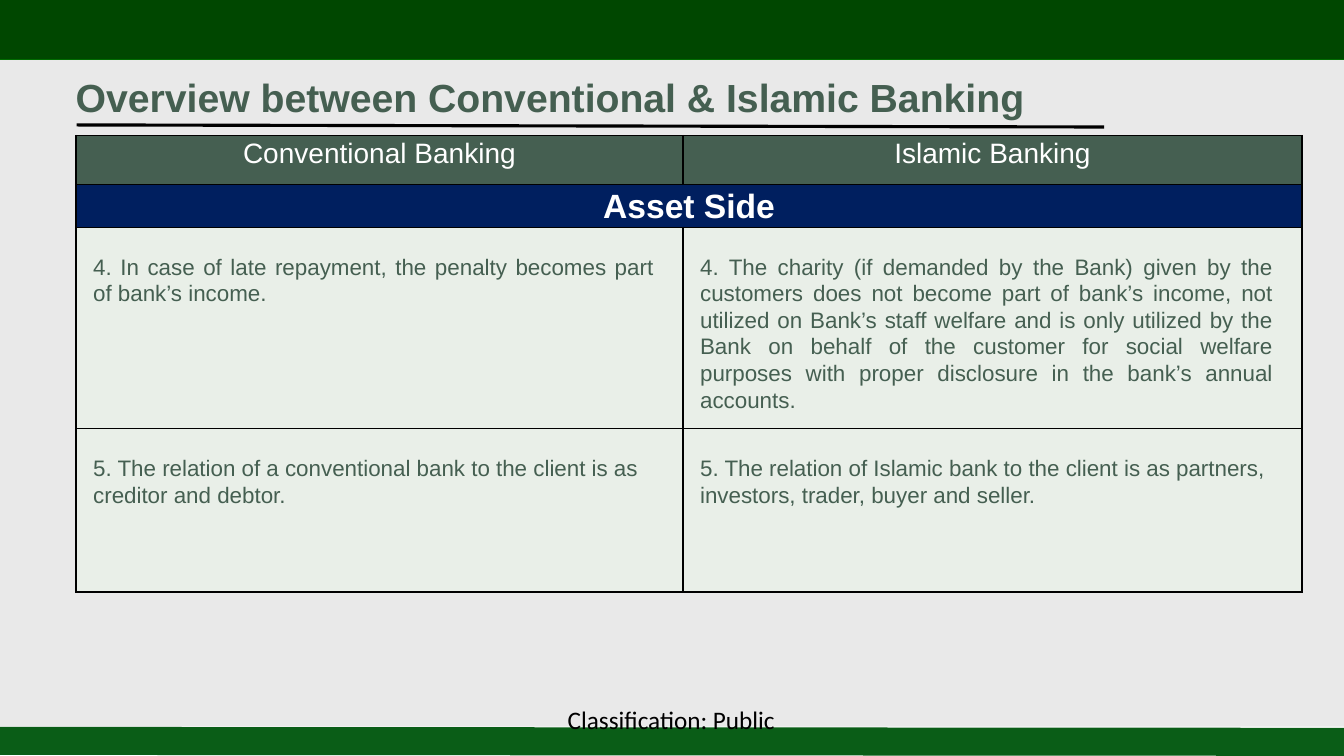
import pptx
import pptx.util
import pptx.dml.color
import pptx.enum.shapes
import pptx.enum.text
from lxml import etree
from pptx.oxml.ns import qn

RGBColor = pptx.dml.color.RGBColor
Pt = pptx.util.Pt
ALIGN = pptx.enum.text.PP_ALIGN

BLACK = RGBColor(0x00, 0x00, 0x00)
WHITE = RGBColor(0xFF, 0xFF, 0xFF)
GREY = RGBColor(0xD9, 0xD9, 0xD9)
BANNER_GREEN = RGBColor(0x00, 0x47, 0x00)
BANNER_EDGE = RGBColor(0x00, 0x6B, 0x00)
FOOTER_GREEN = RGBColor(0x0A, 0x5D, 0x17)
SLATE_GREEN = RGBColor(0x45, 0x5F, 0x51)
NAVY = RGBColor(0x00, 0x1F, 0x5F)
PALE_GREEN = RGBColor(0xE9, 0xEF, 0xE8)

WIDTH = pptx.util.Inches(13.33)
HEIGHT = pptx.util.Inches(7.5)
BANNER_BOTTOM = 7.87
FOOTER_TOP = 96.13
COLUMN_SHARES = (45.16, 46.06)
ROW_SHARES = (6.53, 5.6, 26.67, 21.6)

HEADINGS = ("Conventional Banking", "Islamic Banking")
SECTION = "Asset Side"
COMPARISONS = (
    (("4. In case of late repayment, the penalty becomes part of bank’s income.",),
     ("4. The charity (if demanded by the Bank) given by the customers does not become "
      "part of bank’s income, not utilized on Bank’s staff welfare and is only utilized "
      "by the Bank on behalf of the customer for social welfare purposes with proper "
      "disclosure in the bank’s annual accounts.",)),
    (("5. The relation of a conventional bank to the client is as",
      "creditor and debtor."),
     ("5. The relation of Islamic bank to the client is as partners,",
      "investors, trader, buyer and seller.")),
)


def across(percent):
    return round(WIDTH * percent / 100)


def down(percent):
    return round(HEIGHT * percent / 100)


def add_band(slide, top, bottom, color, opacity=100):
    """Fill the full slide width between two heights."""
    band = slide.shapes.add_shape(pptx.enum.shapes.MSO_SHAPE.RECTANGLE,
                                  0, down(top), WIDTH, down(bottom - top))
    band.shadow.inherit = False
    band.fill.solid()
    band.fill.fore_color.rgb = color
    band.line.fill.background()
    if opacity < 100:
        tint = band.fill._xPr.find(".//" + qn("a:srgbClr"))
        etree.SubElement(tint, qn("a:alpha")).set("val", str(opacity * 1000))


def add_rule(slide, start, end, color, weight):
    (x1, y1), (x2, y2) = start, end
    rule = slide.shapes.add_connector(pptx.enum.shapes.MSO_CONNECTOR.STRAIGHT,
                                      across(x1), down(y1), across(x2), down(y2))
    rule.line.color.rgb = color
    rule.line.width = Pt(weight)
    etree.SubElement(rule._element.spPr, qn("a:effectLst"))


def write(paragraph, text, font, size, color, bold=False):
    run = paragraph.add_run()
    run.text = text
    run.font.name = font
    run.font.size = Pt(size)
    run.font.color.rgb = color
    run.font.bold = bold


def add_label(slide, left, top, width, height, text, *style):
    label = slide.shapes.add_textbox(across(left), down(top), across(width), down(height))
    frame = label.text_frame
    frame.word_wrap = True
    frame.margin_left = frame.margin_right = frame.margin_bottom = 0
    frame.margin_top = Pt(1)
    write(frame.paragraphs[0], text, *style)


def border_cell(cell):
    properties = cell._tc.get_or_add_tcPr()
    for position, side in enumerate(("lnL", "lnR", "lnT", "lnB")):
        edge = etree.Element(qn("a:" + side), w=str(Pt(1)))
        fill = etree.SubElement(edge, qn("a:solidFill"))
        etree.SubElement(fill, qn("a:srgbClr"), val=str(BLACK))
        properties.insert(position, edge)


def fill_cell(cell, lines, fill, size, color, bold=False, body=False):
    """Body cells are inset and justified; the others are centred."""
    cell.fill.solid()
    cell.fill.fore_color.rgb = fill
    cell.margin_left = pptx.util.Inches(0.17 if body else 0)
    cell.margin_right = pptx.util.Inches(0.29 if body else 0)
    cell.margin_top = pptx.util.Inches(0.26 if body else 0.03)
    cell.margin_bottom = 0
    for index, line in enumerate(lines):
        frame = cell.text_frame
        paragraph = frame.add_paragraph() if index else frame.paragraphs[0]
        paragraph.alignment = ALIGN.JUSTIFY if body else ALIGN.CENTER
        if body:
            paragraph.line_spacing = 1.07
        write(paragraph, line, "Arial", size, color, bold)


def add_comparison(slide):
    table = slide.shapes.add_table(
        len(ROW_SHARES), len(COLUMN_SHARES), across(5.66), down(17.92),
        across(sum(COLUMN_SHARES)), down(sum(ROW_SHARES))).table
    for column, share in zip(table.columns, COLUMN_SHARES):
        column.width = across(share)
    for row, share in zip(table.rows, ROW_SHARES):
        row.height = down(share)
    for column, heading in enumerate(HEADINGS):
        fill_cell(table.cell(0, column), [heading], SLATE_GREEN, 20, WHITE)
    section = table.cell(1, 0)
    section.merge(table.cell(1, 1))
    fill_cell(section, [SECTION], NAVY, 24, WHITE, bold=True)
    for row, sides in enumerate(COMPARISONS, start=2):
        for column, lines in enumerate(sides):
            fill_cell(table.cell(row, column), lines, PALE_GREEN, 16, SLATE_GREEN, body=True)
    for cell in table.iter_cells():
        border_cell(cell)


def main():
    deck = pptx.Presentation()
    deck.slide_width, deck.slide_height = WIDTH, HEIGHT
    slide = deck.slides.add_slide(deck.slide_layouts[6])

    add_band(slide, BANNER_BOTTOM, FOOTER_TOP, GREY, opacity=56)
    add_rule(slide, (0, 98), (100, 98.13), FOOTER_GREEN, 20)
    add_comparison(slide)
    add_label(slide, 5.63, 9.47, 73.82, 6.4,
              "Overview between Conventional & Islamic Banking",
              "Arial", 28, SLATE_GREEN, True)
    add_band(slide, 0, BANNER_BOTTOM, BANNER_GREEN)
    add_rule(slide, (0, BANNER_BOTTOM), (100, BANNER_BOTTOM), BANNER_EDGE, 1)
    add_rule(slide, (5.7, 16.53), (82.15, 16.8), BLACK, 2.25)
    add_label(slide, 42.24, 93, 15.8, 3.73, "Classification: Public", "Calibri", 18, BLACK)

    deck.save("out.pptx")


if __name__ == "__main__":
    main()
